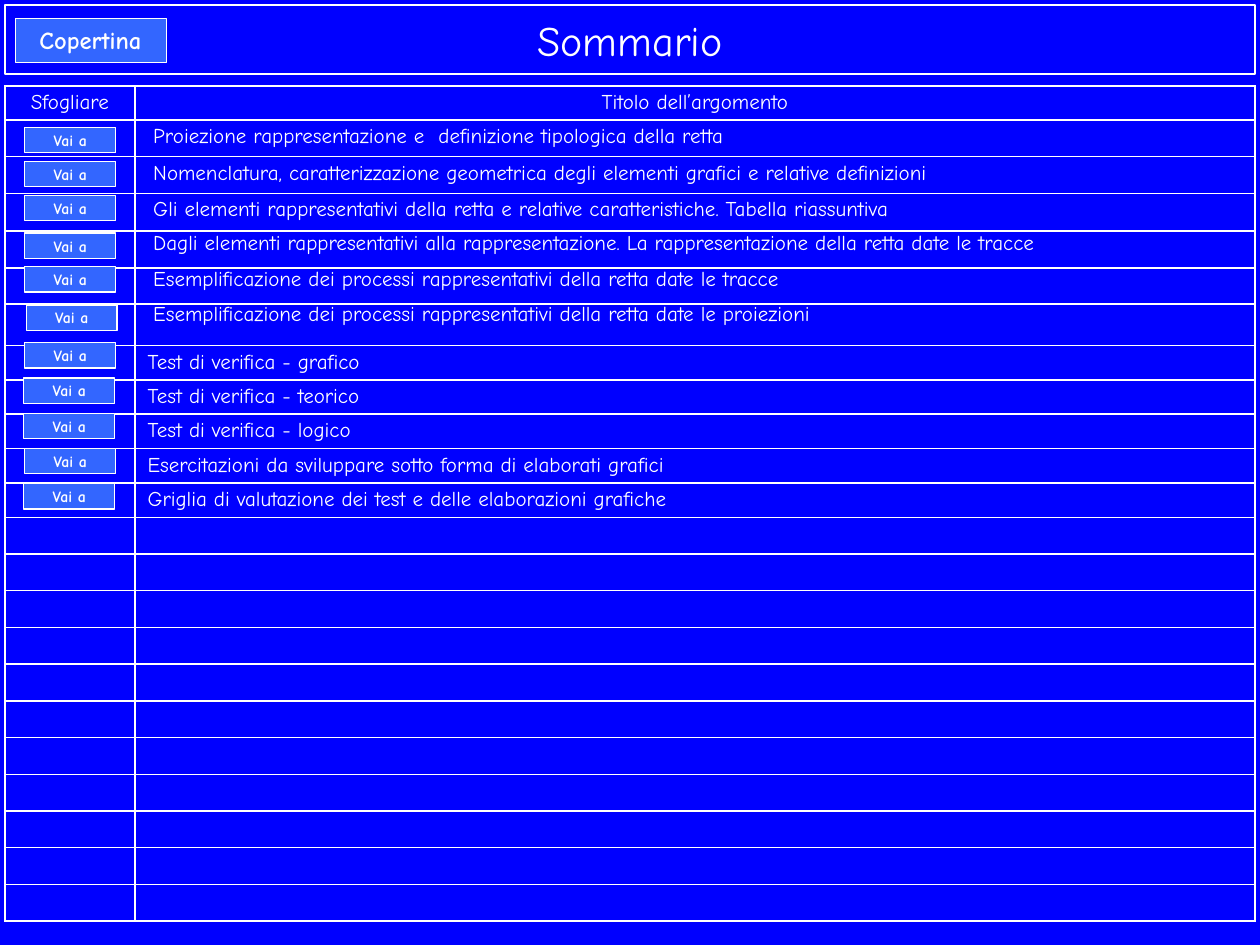
from lxml import etree
from pptx import Presentation
from pptx.dml.color import RGBColor
from pptx.enum.shapes import MSO_SHAPE
from pptx.enum.text import MSO_ANCHOR, MSO_AUTO_SIZE, PP_ALIGN
from pptx.oxml.ns import qn
from pptx.util import Cm, Pt

BUTTON = MSO_SHAPE.ACTION_BUTTON_CUSTOM
MIDDLE = MSO_ANCHOR.MIDDLE
GROW = MSO_AUTO_SIZE.SHAPE_TO_FIT_TEXT
CENTER, LEFT = PP_ALIGN.CENTER, PP_ALIGN.LEFT
BLUE = RGBColor(0x00, 0x00, 0xFF)
BUTTON_BLUE = RGBColor(0x33, 0x66, 0xFF)
WHITE = RGBColor(0xFF, 0xFF, 0xFF)
FONT = "Comic Neue"

ROW_HEIGHTS = [0.69, 0.73, 0.75, 0.75, 0.75, 0.73, 0.83] + [0.69] * 5 + [0.74] * 11
FIRST_TEST_ROW = 7
TESTS = [
    "Test di verifica - grafico",
    "Test di verifica - teorico",
    "Test di verifica - logico",
    "Esercitazioni da sviluppare sotto forma di elaborati grafici",
    "Griglia di valutazione dei test e delle elaborazioni grafiche",
]
TOPICS = [
    (2.41, 21.29, 0.9, "Proiezione rappresentazione e  definizione tipologica della retta"),
    (3.15, 22.71, 0.9, "Nomenclatura, caratterizzazione geometrica degli elementi grafici e relative definizioni"),
    (3.81, 20.52, 1.0, "Gli elementi rappresentativi della retta e relative caratteristiche. Tabella riassuntiva"),
    (4.55, 21.13, 0.9, "Dagli elementi rappresentativi alla rappresentazione. La rappresentazione della retta date le tracce"),
    (5.23, 20.96, 1.0, "Esemplificazione dei processi rappresentativi della retta date le tracce"),
    (5.99, 21.23, 0.9, "Esemplificazione dei processi rappresentativi della retta date le proiezioni"),
]
BUTTONS = [
    (0.3, 0.36, 3.05, 0.89, "Copertina", 14, 0.25),
]
GO_TO_PLACES = [
    (0.5, 2.57), (0.5, 3.25), (0.5, 3.94), (0.5, 4.7), (0.5, 5.38), (0.53, 6.15),
    (0.5, 6.91), (0.48, 7.62), (0.48, 8.33), (0.5, 9.04), (0.48, 9.75),
]
BUTTONS += [(left, top, 1.83, 0.51, "Vai a", 9, 0) for left, top in GO_TO_PLACES]


def write(text_frame, text, size, alignment=LEFT, spacing=1.0, bold=False):
    text_frame.text = text
    paragraph = text_frame.paragraphs[0]
    paragraph.alignment = alignment
    paragraph.line_spacing = spacing
    font = paragraph.runs[0].font
    font.name, font.size, font.bold = FONT, Pt(size), bold
    font.color.rgb = WHITE


def draw_borders(cell):
    properties = cell._tc.get_or_add_tcPr()
    for index, side in enumerate(("a:lnL", "a:lnR", "a:lnT", "a:lnB")):
        line = etree.Element(qn(side), w=str(Pt(1)))
        fill = etree.SubElement(line, qn("a:solidFill"))
        etree.SubElement(fill, qn("a:srgbClr"), val=str(WHITE))
        properties.insert(index, line)


presentation = Presentation()
presentation.slide_width = Cm(25.4)
presentation.slide_height = Cm(19.05)
slide = presentation.slides.add_slide(presentation.slide_layouts[5])
slide.background.fill.solid()
slide.background.fill.fore_color.rgb = BLUE

title = slide.shapes.title
title.left, title.top, title.width, title.height = Cm(0.1), Cm(0.1), Cm(25.2), Cm(1.4)
title.line.color.rgb = WHITE
title.line.width = Pt(1)
title.text_frame.vertical_anchor = MIDDLE
write(title.text_frame, "Sommario", 24, CENTER)

table = slide.shapes.add_table(
    len(ROW_HEIGHTS), 2, Cm(0.1), Cm(1.73), Cm(25.2), Cm(sum(ROW_HEIGHTS))
).table
table.first_row = False
table.horz_banding = False
table.columns[0].width = Cm(2.62)
table.columns[1].width = Cm(22.58)
for row, height in zip(table.rows, ROW_HEIGHTS):
    row.height = Cm(height)
for cell in table.iter_cells():
    cell.fill.background()
    draw_borders(cell)
    end_properties = cell.text_frame.paragraphs[0]._p.get_or_add_endParaRPr()
    end_properties.set("sz", "800")
for column, heading in enumerate(("Sfogliare", "Titolo dell’argomento")):
    write(table.cell(0, column).text_frame, heading, 12, CENTER, 0.9)
for row_index, test in enumerate(TESTS, FIRST_TEST_ROW):
    write(table.cell(row_index, 1).text_frame, test, 12, LEFT, 0.9)

for left, top, width, height, label, size, line_width in BUTTONS:
    button = slide.shapes.add_shape(BUTTON, Cm(left), Cm(top), Cm(width), Cm(height))
    button.shadow.inherit = False
    button.fill.solid()
    button.fill.fore_color.rgb = BUTTON_BLUE
    button.line.color.rgb = WHITE
    button.line.width = Pt(line_width)
    button.text_frame.vertical_anchor = MIDDLE
    write(button.text_frame, label, size, CENTER, bold=True)

for top, width, spacing, topic in TOPICS:
    text_box = slide.shapes.add_textbox(Cm(2.84), Cm(top), Cm(width), Cm(0.71))
    text_box.text_frame.word_wrap = True
    text_box.text_frame.auto_size = GROW
    write(text_box.text_frame, topic, 12, LEFT, spacing)

presentation.save("out.pptx")
